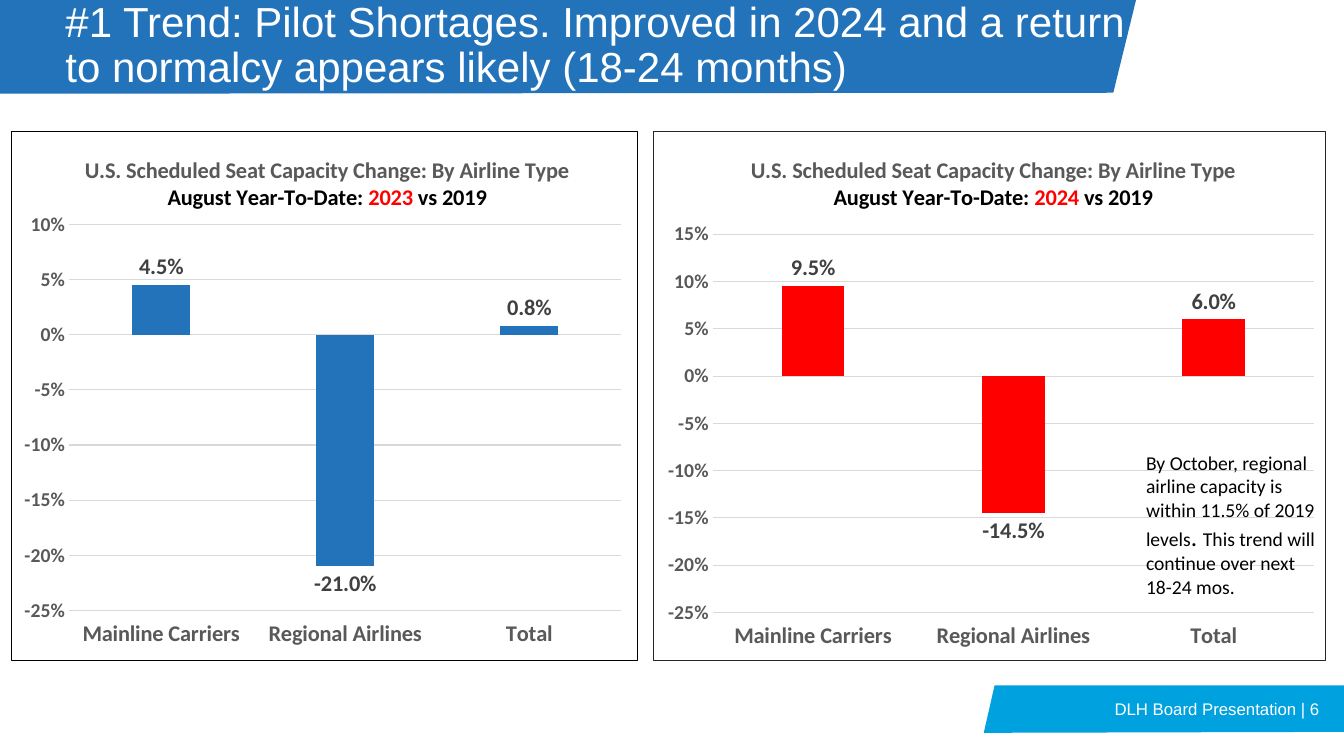
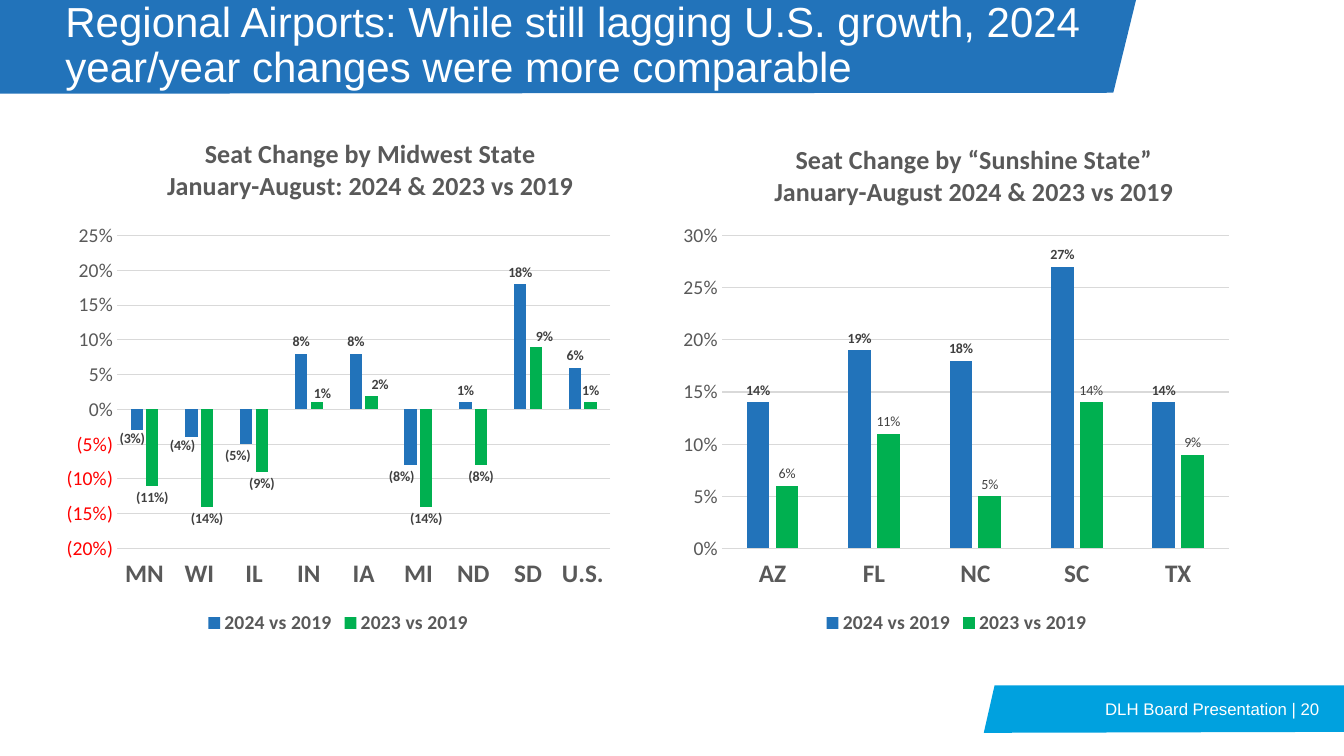
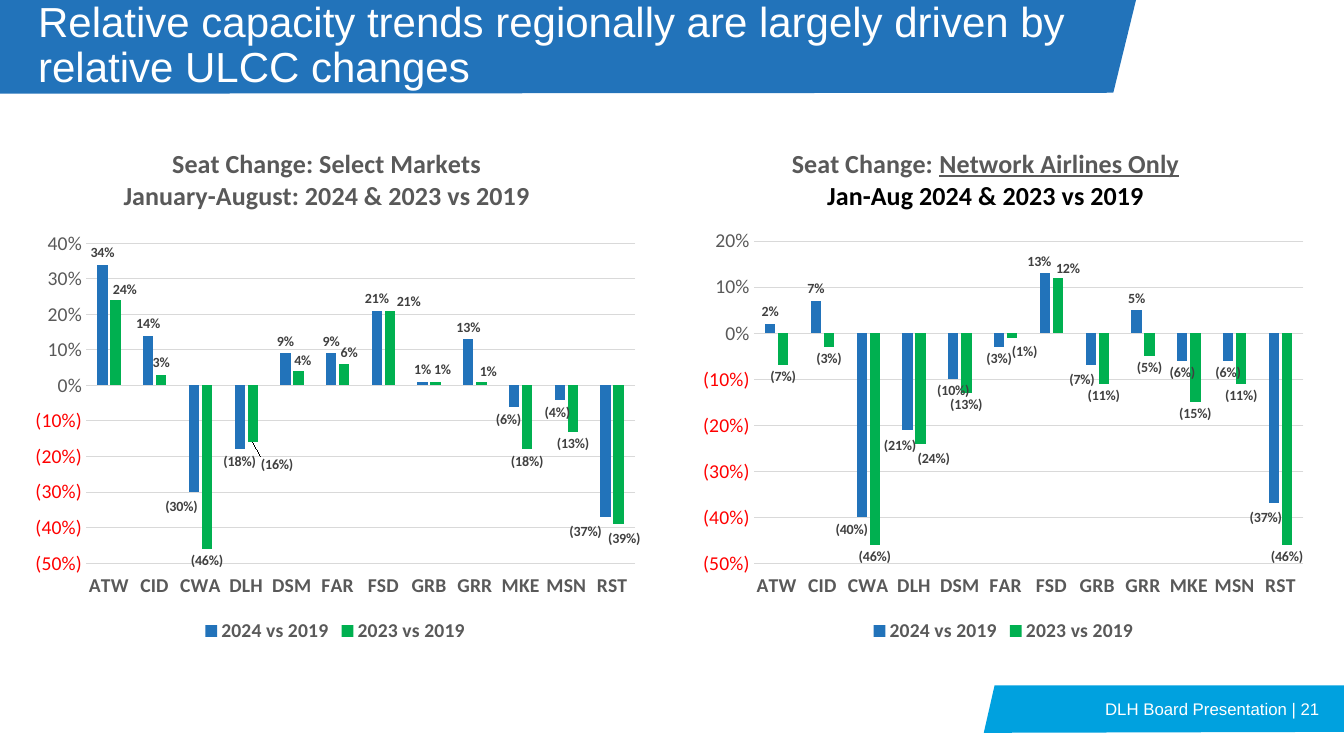
from copy import deepcopy
from dataclasses import dataclass, field

from lxml import etree
from pptx import Presentation
from pptx.chart.data import CategoryChartData
from pptx.dml.color import RGBColor
from pptx.enum.chart import XL_CHART_TYPE, XL_LABEL_POSITION, XL_LEGEND_POSITION, XL_TICK_LABEL_POSITION, XL_TICK_MARK
from pptx.enum.text import MSO_ANCHOR, PP_ALIGN
from pptx.oxml import parse_xml
from pptx.oxml.ns import nsdecls, qn
from pptx.util import Emu, Inches, Pt

COLUMNS = XL_CHART_TYPE.COLUMN_CLUSTERED
OUTSIDE = XL_LABEL_POSITION.OUTSIDE_END
LEGEND_BOTTOM = XL_LEGEND_POSITION.BOTTOM
LABELS_LOW = XL_TICK_LABEL_POSITION.LOW
NO_TICK = XL_TICK_MARK.NONE
MIDDLE = MSO_ANCHOR.MIDDLE
LEFT, RIGHT = PP_ALIGN.LEFT, PP_ALIGN.RIGHT
SLIDE_WIDTH, SLIDE_HEIGHT = Inches(13.33), Inches(7.5)


class Theme:
    BLUE, SKY, GREEN, RED = "2273BA", "00A1DF", "00B050", "FF0000"
    WHITE, BLACK, GRAY, DARK, GRID = "FFFFFF", "000000", "595959", "404040", "D9D9D9"
    HEADING_FONT, BODY_FONT = "Arial", "Calibri"
    HEADING, FOOTER, NOTE, NOTE_DOT = 30, 12, 14, 18
    AXIS, LEGEND, LABEL = 14, 14, 10
    TITLE_LARGE, TITLE_SMALL, LABEL_LARGE = 18.6, 16, 16
    HAIRLINE = 0.75
    PARENTHESES, RED_PARENTHESES = r"0%;\(0%\)", r"0%;[Red]\(0%\)"


@dataclass
class Box:
    """A region in percent of the slide."""
    left: float
    top: float
    width: float
    height: float

    def emu(self):
        return (Emu(int(SLIDE_WIDTH * self.left / 100)), Emu(int(SLIDE_HEIGHT * self.top / 100)),
                Emu(int(SLIDE_WIDTH * self.width / 100)), Emu(int(SLIDE_HEIGHT * self.height / 100)))

    def inside(self, left, width):
        """The full-height part that starts at one share of the width and spans another."""
        return Box(self.left + left * self.width, self.top, width * self.width, self.height)


@dataclass
class Series:
    """One set of columns; moved maps a point to its label's shift in percent of the chart."""
    name: str
    values: list
    color: str
    moved: dict = field(default_factory=dict)
    bold: bool = True


@dataclass
class ColumnChart:
    """Title and plot positions are percentages of the chart's box."""
    box: Box
    title: list
    title_at: tuple
    plot: tuple
    categories: list
    series: list
    scale: tuple
    category_size: float
    title_size: float = Theme.TITLE_LARGE
    label_size: float = Theme.LABEL
    label_format: str = Theme.PARENTHESES
    axis_format: str = Theme.RED_PARENTHESES
    axis_bold: bool = False
    border: str = ""


HEADER = Box(0, 0, 84.53, 12.4)
HEADER_OUTLINE = [(0, 0), (1, 0), (0.98, 0.99), (0, 1)]
FOOTER = Box(73.2, 90.67, 26.8, 6.27)
FOOTER_OUTLINE = [(0.03, 0), (1, 0), (1, 0.98), (0, 1)]


def style_font(font, color, size, name=Theme.BODY_FONT, **formats):
    for attribute, value in {"name": name, "size": Pt(size), **formats}.items():
        setattr(font, attribute, value)
    font.color.rgb = RGBColor.from_string(color)


def add_band(slide, box, outline, color):
    left, top, width, height = box.emu()
    points = [(int(left + x * width), int(top + y * height)) for x, y in outline]
    builder = slide.shapes.build_freeform(*points[0], scale=1.0)
    builder.add_line_segments(points[1:], close=True)
    band = builder.convert_to_shape()
    band.shadow.inherit = False
    band.fill.solid()
    band.fill.fore_color.rgb = RGBColor.from_string(color)
    band.line.fill.background()


def add_text(slide, box, runs, color, font, alignment=LEFT, anchor=MIDDLE, spacing=1.0):
    """Write one paragraph from (text, size) runs."""
    frame = slide.shapes.add_textbox(*box.emu()).text_frame
    frame.word_wrap = True
    frame.vertical_anchor = anchor
    paragraph = frame.paragraphs[0]
    paragraph.alignment, paragraph.line_spacing = alignment, spacing
    for text, size in runs:
        run = paragraph.add_run()
        run.text = text
        style_font(run.font, color, size, font)


def add_frame(slide, title, title_box, number):
    """Draw the header band with its title and the footer band with its page number."""
    add_band(slide, FOOTER, FOOTER_OUTLINE, Theme.SKY)
    add_band(slide, HEADER, HEADER_OUTLINE, Theme.BLUE)
    add_text(slide, title_box, [(title, Theme.HEADING)], Theme.WHITE, Theme.HEADING_FONT, spacing=0.9)
    add_text(slide, FOOTER.inside(0.13, 0.83), [(f"DLH Board Presentation | {number}", Theme.FOOTER)],
             Theme.WHITE, Theme.HEADING_FONT, RIGHT)


def set_layout(element, index, settings):
    """Place a chart part by hand, replacing the layout it has."""
    for old in element.findall(qn("c:layout")):
        element.remove(old)
    layout = etree.Element(qn("c:layout"))
    manual = etree.SubElement(layout, qn("c:manualLayout"))
    for name, value in settings.items():
        etree.SubElement(manual, qn(f"c:{name}"), val=str(value))
    element.insert(index, layout)


def shares(names, percentages):
    return {name: round(value / 100, 4) for name, value in zip(names, percentages)}


def set_chart_title(chart, spec):
    frame = chart.chart_title.text_frame
    for index, line in enumerate(spec.title):
        paragraph = frame.add_paragraph() if index else frame.paragraphs[0]
        for text, color, underline in line:
            run = paragraph.add_run()
            run.text = text
            style_font(run.font, color, spec.title_size, bold=True, underline=underline)
    set_layout(chart.chart_title._element, 1,
               {"xMode": "edge", "yMode": "edge", **shares("xy", spec.title_at)})


def style_axes(chart, spec):
    category, value = chart.category_axis, chart.value_axis
    for axis, size, bold in ((category, spec.category_size, True), (value, Theme.AXIS, spec.axis_bold)):
        axis.major_tick_mark = axis.minor_tick_mark = NO_TICK
        style_font(axis.tick_labels.font, Theme.GRAY, size, bold=bold)
    category.tick_label_position = LABELS_LOW
    value.format.line.fill.background()
    value.minimum_scale, value.maximum_scale, value.major_unit = spec.scale
    value.tick_labels.number_format = spec.axis_format
    value.tick_labels.number_format_is_linked = False
    for line in (category.format.line, value.major_gridlines.format.line):
        line.width = Pt(Theme.HAIRLINE)
        line.color.rgb = RGBColor.from_string(Theme.GRID)


def move_labels(labels, moved):
    """Give single labels the look of their series and a shift of their own."""
    element = labels._element
    shared = [child for child in element if child.tag != qn("c:showLeaderLines")]
    for position, (point, shift) in enumerate(sorted(moved.items())):
        label = etree.Element(qn("c:dLbl"))
        etree.SubElement(label, qn("c:idx"), val=str(point))
        label.extend([deepcopy(child) for child in shared])
        set_layout(label, 1, shares("xy", shift))
        element.insert(position, label)


def style_series(drawn, series, spec):
    drawn.invert_if_negative = False
    drawn.format.fill.solid()
    drawn.format.fill.fore_color.rgb = RGBColor.from_string(series.color)
    labels = drawn.data_labels
    formats = {"show_value": True, "position": OUTSIDE,
               "number_format": spec.label_format, "number_format_is_linked": False}
    for attribute, value in formats.items():
        setattr(labels, attribute, value)
    style_font(labels.font, Theme.DARK, spec.label_size, bold=series.bold)
    move_labels(labels, series.moved)


def add_border(chart, color):
    border = parse_xml(
        f'<c:spPr {nsdecls("c", "a")}><a:noFill/><a:ln w="{Pt(Theme.HAIRLINE)}"><a:solidFill>'
        f'<a:srgbClr val="{color}"/></a:solidFill></a:ln></c:spPr>')
    chart._chartSpace.find(qn("c:chart")).addnext(border)


def add_column_chart(slide, spec):
    data = CategoryChartData(number_format="0%")
    data.categories = spec.categories
    for series in spec.series:
        data.add_series(series.name, series.values)
    chart = slide.shapes.add_chart(COLUMNS, *spec.box.emu(), data).chart
    style_font(chart.font, Theme.BLACK, Theme.LABEL)
    set_chart_title(chart, spec)
    style_axes(chart, spec)
    plot = chart.plots[0]
    plot.gap_width, plot.overlap, plot.vary_by_categories = 219, -27, False
    for drawn, series in zip(plot.series, spec.series):
        style_series(drawn, series, spec)
    chart.has_legend = len(spec.series) > 1
    if chart.has_legend:
        chart.legend.position = LEGEND_BOTTOM
        chart.legend.include_in_layout = False
        style_font(chart.legend.font, Theme.GRAY, Theme.LEGEND, bold=True)
    set_layout(chart._chartSpace.find(f".//{qn('c:plotArea')}"), 0,
               {"layoutTarget": "inner", "xMode": "edge", "yMode": "edge", **shares("xywh", spec.plot)})
    if spec.border:
        add_border(chart, spec.border)


def gray_title(*lines):
    return [[(line, Theme.GRAY, False)] for line in lines]


def capacity_chart(box, year, values, color, scale, title_at, plot, border):
    """A framed chart of one year's change against 2019."""
    title = gray_title("U.S. Scheduled Seat Capacity Change: By Airline Type") + [[
        ("August Year-To-Date: ", Theme.BLACK, False), (year, Theme.RED, False),
        (" vs 2019", Theme.BLACK, False)]]
    return ColumnChart(
        box, title, title_at, plot, ["Mainline Carriers", "Regional Airlines", "Total"],
        [Series("Series 1", values, color)], scale, category_size=16,
        title_size=Theme.TITLE_SMALL, label_size=Theme.LABEL_LARGE, label_format="0.0%",
        axis_format="0%", axis_bold=True, border=border)


def year_pair(values_2024, values_2023, moved_2024=None, moved_2023=None, bold_2023=True):
    return [Series("2024 vs 2019", values_2024, Theme.BLUE, moved_2024 or {}),
            Series("2023 vs 2019", values_2023, Theme.GREEN, moved_2023 or {}, bold_2023)]


def shortage_slide(slide):
    add_frame(slide, "#1 Trend: Pilot Shortages. Improved in 2024 and a return to normalcy "
              "appears likely (18-24 months)", Box(4.13, 0, 81, 12.27), 6)
    add_column_chart(slide, capacity_chart(
        Box(0.83, 17.33, 46.65, 70.13), "2023", [0.045, -0.21, 0.008], Theme.BLUE,
        (-0.25, 0.1, 0.05), (11.2, 4), (9.2, 17.6, 88.2, 72.9), Theme.BLACK))
    add_column_chart(slide, capacity_chart(
        Box(48.6, 17.33, 50.1, 70.13), "2024", [0.095, -0.145, 0.06], Theme.RED,
        (-0.25, 0.15, 0.05), (14, 4), (8.8, 19.4, 89.4, 71.5), "262626"))
    note = [("By October, regional airline capacity is within 11.5% of 2019 levels", Theme.NOTE),
            (". ", Theme.NOTE_DOT), ("This trend will continue over next 18-24 mos.", Theme.NOTE)]
    add_text(slide, Box(84.53, 58.93, 14.18, 21.07), note, Theme.BLACK, Theme.BODY_FONT,
             anchor=MSO_ANCHOR.TOP)


def states_slide(slide):
    add_frame(slide, "Regional Airports: While still lagging U.S. growth, 2024 year/year changes "
              "were more comparable", Box(4.13, 0, 77.33, 12.27), 20)
    midwest = year_pair(
        [-0.03, -0.04, -0.05, 0.08, 0.08, -0.08, 0.01, 0.18, 0.06],
        [-0.11, -0.14, -0.09, 0.01, 0.02, -0.14, -0.08, 0.09, 0.01],
        {0: (-0.8, -0.6), 1: (-1.6, -0.6), 2: (-1.5, 0), 5: (-1.6, 0)},
        {3: (1, 0.7), 4: (1.5, 0.3), 7: (1.5, 0.3)})
    add_column_chart(slide, ColumnChart(
        Box(4.13, 16.13, 42.08, 68.4),
        gray_title("Seat Change by Midwest State", "January-August: 2024 & 2023 vs 2019"),
        (19.2, 2.1), (10.9, 22, 87.2, 60.5),
        ["MN", "WI", "IL", "IN", "IA", "MI", "ND", "SD", "U.S."],
        midwest, (-0.2, 0.25, 0.05), category_size=18))
    sunshine = year_pair([0.14, 0.19, 0.18, 0.27, 0.14], [0.06, 0.11, 0.05, 0.14, 0.09],
                         bold_2023=False)
    add_column_chart(slide, ColumnChart(
        Box(50.03, 16.13, 42.3, 68.4),
        gray_title("Seat Change by “Sunshine State”", "January-August 2024 & 2023 vs 2019"),
        (17.4, 3.3), (8.7, 22, 89.2, 60.5), ["AZ", "FL", "NC", "SC", "TX"],
        sunshine, (0, 0.3, 0.05), category_size=18))


def markets_slide(slide):
    add_frame(slide, "Relative capacity trends regionally are largely driven by relative ULCC changes",
              Box(2.1, 0, 82.6, 12.27), 21)
    airports = ["ATW", "CID", "CWA", "DLH", "DSM", "FAR", "FSD", "GRB", "GRR", "MKE", "MSN", "RST"]
    all_airlines = year_pair(
        [0.34, 0.14, -0.3, -0.18, 0.09, 0.09, 0.21, 0.01, 0.13, -0.06, -0.04, -0.37],
        [0.24, 0.03, -0.46, -0.16, 0.04, 0.06, 0.21, 0.01, 0.01, -0.18, -0.13, -0.39],
        {2: (-2, 0.5), 9: (-0.9, 0.2), 10: (-0.4, 0.2), 11: (-3.2, 0.6)},
        {0: (1.5, 0.3), 3: (3.9, 2), 4: (0.7, 0.3), 5: (0.8, 0.1), 6: (3, 0.6),
         7: (1.1, 0), 8: (1.1, 0.3), 11: (0.9, 0.6)})
    add_column_chart(slide, ColumnChart(
        Box(1.65, 17.2, 46.58, 68.4),
        gray_title("Seat Change: Select Markets", "January-August: 2024 & 2023 vs 2019"),
        (15.7, 2.5), (10.2, 21.9, 87.7, 61.9), airports,
        all_airlines, (-0.5, 0.4, 0.1), category_size=14))
    network_airlines = year_pair(
        [0.02, 0.07, -0.4, -0.21, -0.1, -0.03, 0.13, -0.07, 0.05, -0.06, -0.06, -0.37],
        [-0.07, -0.03, -0.46, -0.24, -0.13, -0.01, 0.12, -0.11, -0.05, -0.15, -0.11, -0.46],
        {2: (-1.6, 0.2), 3: (-1.2, 0.8), 6: (-0.9, 0), 7: (-1.4, 0.5), 11: (-1.3, 0.5)},
        {3: (2.1, 0.7), 5: (2, 0.5), 6: (1.6, 0.5)})
    network_title = [[("Seat Change: ", Theme.GRAY, False), ("Network Airlines Only", Theme.GRAY, True)],
                     [("Jan-Aug 2024 & 2023 vs 2019", Theme.BLACK, False)]]
    add_column_chart(slide, ColumnChart(
        Box(51.38, 17.2, 46.58, 68.4), network_title, (15.7, 2.5), (10.1, 21.5, 87.8, 62.3), airports,
        network_airlines, (-0.5, 0.2, 0.1), category_size=14))


def main():
    presentation = Presentation()
    presentation.slide_width, presentation.slide_height = SLIDE_WIDTH, SLIDE_HEIGHT
    blank = presentation.slide_layouts[6]
    for build_slide in (shortage_slide, states_slide, markets_slide):
        build_slide(presentation.slides.add_slide(blank))
    presentation.save("out.pptx")


if __name__ == "__main__":
    main()
